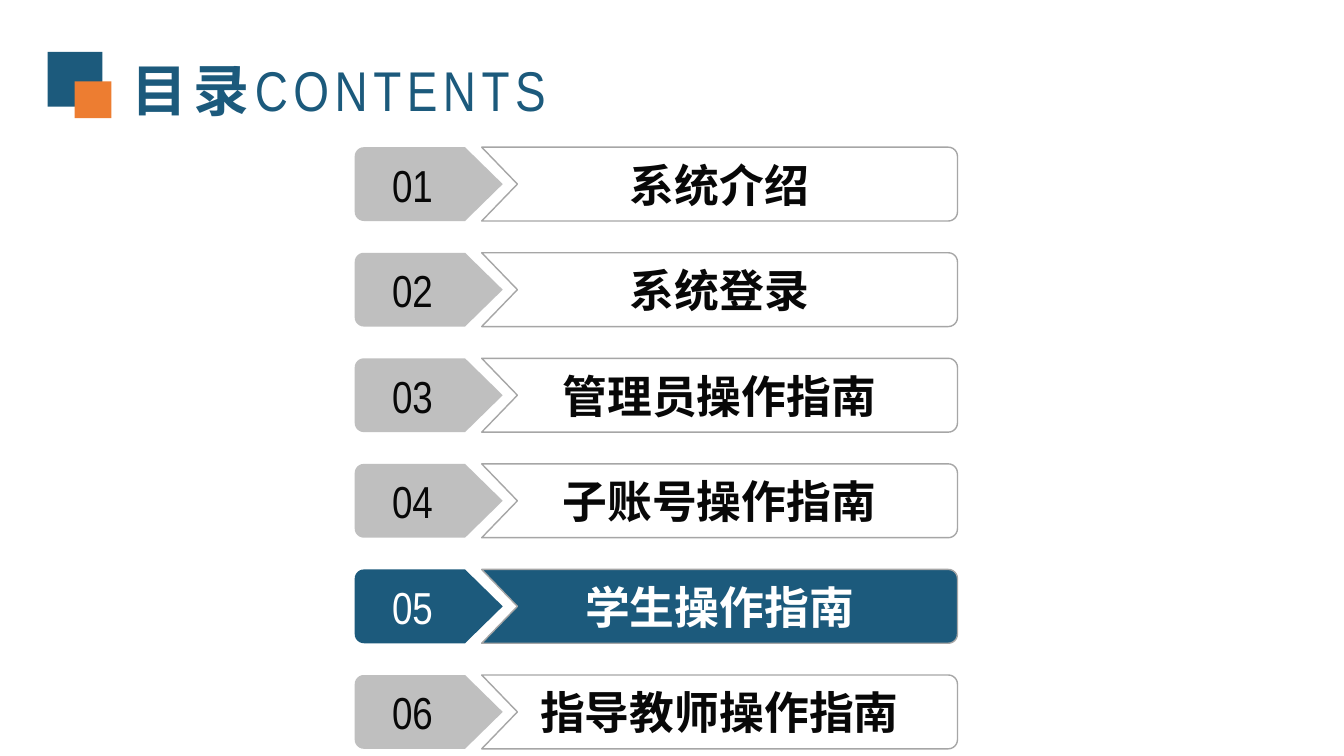
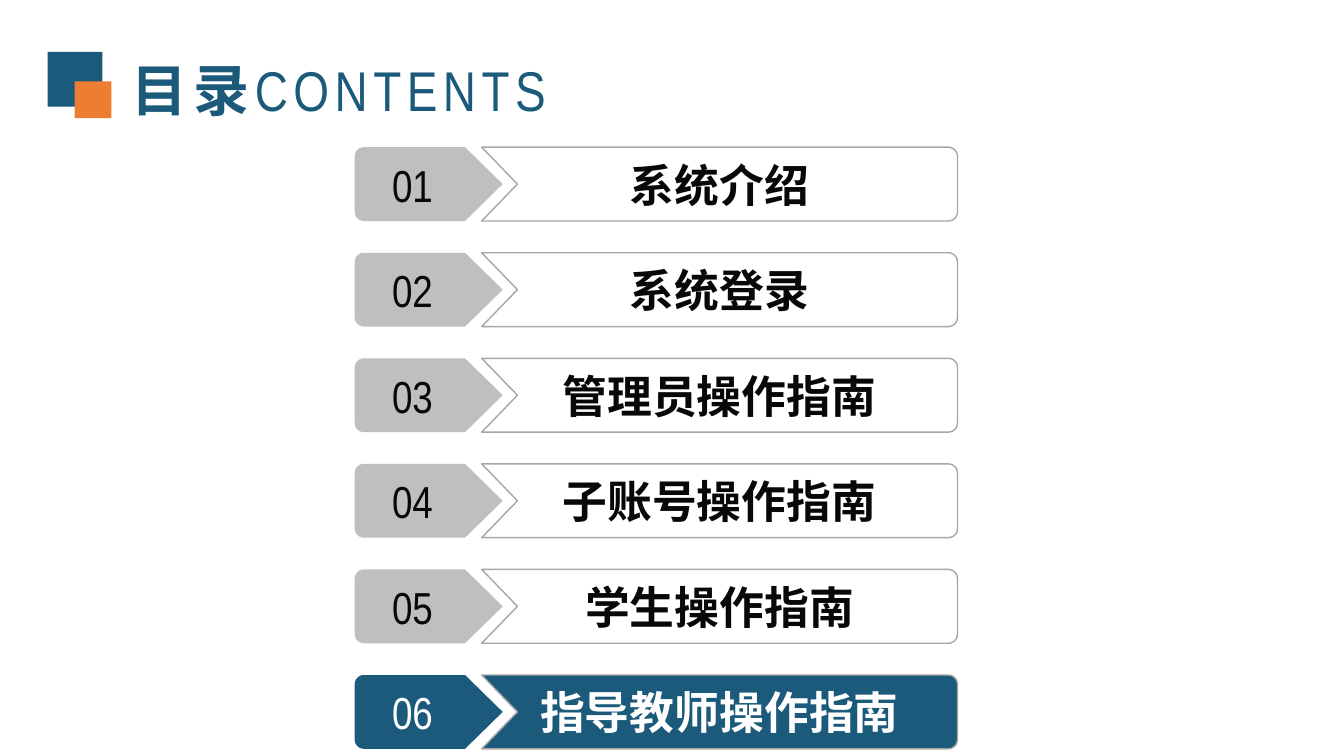
"""Build the two contents slides, each with its current chapter highlighted."""
from math import cos, radians, sin

from lxml.etree import SubElement
from pptx import Presentation
from pptx.dml.color import RGBColor
from pptx.enum.shapes import MSO_SHAPE
from pptx.enum.text import MSO_ANCHOR, MSO_AUTO_SIZE, PP_ALIGN
from pptx.oxml.ns import qn
from pptx.util import Cm, Pt

CHAPTERS = ["系统介绍", "系统登录", "管理员操作指南", "子账号操作指南", "学生操作指南", "指导教师操作指南"]
CURRENT = [5, 6]
TITLE = [("目录", True), ("CONTENTS", False)]

BLUE = RGBColor(0x1C, 0x5A, 0x7C)
ORANGE = RGBColor(0xED, 0x7D, 0x31)
GREY = RGBColor(0xBF, 0xBF, 0xBF)
OUTLINE = RGBColor(0xA6, 0xA6, 0xA6)
INK = RGBColor(0x08, 0x08, 0x08)
WHITE = RGBColor(0xFF, 0xFF, 0xFF)
CJK, NARROW = "Noto Sans CJK SC", "Arial Narrow"

SQUARES = [(1.2, 1.31, 1.38, BLUE), (1.88, 2.05, 0.93, ORANGE)]
ROW_TOP, ROW_PITCH, ROW_H, RADIUS = 3.71, 2.66, 1.86, 0.23
TAG_LEFT, TAG_SHOULDER, TAG_TIP = 8.94, 11.72, 12.67
LABEL_LEFT, LABEL_NOTCH, LABEL_RIGHT = 12.14, 13.04, 24.13


def add_run(p, text, size, color, bold):
    r = p.add_run()
    r.text = text
    r.font.size, r.font.bold = Pt(size), bold
    r.font.color.rgb = color
    r.font.name = CJK if bold else NARROW
    SubElement(r.font._element, qn("a:ea")).set("typeface", r.font.name)
    return r


def paint(sp, fill, line=None):
    sp.shadow.inherit = False
    if fill is None:
        sp.fill.background()
    else:
        sp.fill.solid()
        sp.fill.fore_color.rgb = fill
    if line is None:
        sp.line.fill.background()
    else:
        sp.line.color.rgb = line
        sp.line.width = Pt(1)


def corner(cx, cy, start):
    angles = [radians(start + 15 * i) for i in range(7)]
    return [(cx + RADIUS * cos(a), cy + RADIUS * sin(a)) for a in angles]


def add_outline(s, points, text, fill, line, color, bold, right_inset):
    points = [(Cm(x), Cm(y)) for x, y in points]
    builder = s.shapes.build_freeform(*points[0])
    builder.add_line_segments(points[1:], close=True)
    sp = builder.convert_to_shape()
    paint(sp, fill, line)
    tf = sp.text_frame
    tf.word_wrap = True
    tf.vertical_anchor = MSO_ANCHOR.MIDDLE
    tf.margin_left, tf.margin_right = Cm(0.38), Cm(right_inset)
    tf.margin_top = tf.margin_bottom = Cm(0.18)
    p = tf.paragraphs[0]
    p.alignment = PP_ALIGN.CENTER
    add_run(p, text, 32, color, bold)


def add_chapter(s, number, name, active):
    top = ROW_TOP + (number - 1) * ROW_PITCH
    bottom, middle = top + ROW_H, top + ROW_H / 2
    upper, lower = top + RADIUS, bottom - RADIUS
    color = WHITE if active else INK
    label = [(LABEL_LEFT, top), *corner(LABEL_RIGHT - RADIUS, upper, 270),
             *corner(LABEL_RIGHT - RADIUS, lower, 0),
             (LABEL_LEFT, bottom), (LABEL_NOTCH, middle)]
    tag = [(TAG_SHOULDER, top), (TAG_TIP, middle), (TAG_SHOULDER, bottom),
           *corner(TAG_LEFT + RADIUS, lower, 90),
           *corner(TAG_LEFT + RADIUS, upper, 180)]
    add_outline(s, label, name, BLUE if active else None, OUTLINE, color, True, 0.38)
    add_outline(s, tag, f"{number:02d}", BLUE if active else GREY, None, color, False, 1.2)


def add_title(s):
    for left, top, side, color in SQUARES:
        sp = s.shapes.add_shape(MSO_SHAPE.RECTANGLE, Cm(left), Cm(top), Cm(side), Cm(side))
        paint(sp, color)
    tf = s.shapes.add_textbox(Cm(3.07), Cm(1.27), Cm(13.13), Cm(2.06)).text_frame
    tf.word_wrap = True
    tf.auto_size = MSO_AUTO_SIZE.SHAPE_TO_FIT_TEXT
    for text, bold in TITLE:
        r = add_run(tf.paragraphs[0], text, 40, BLUE, bold)
        r.font._element.set("spc", "400")


def main():
    prs = Presentation()
    prs.slide_width, prs.slide_height = Cm(33.87), Cm(19.05)
    for current in CURRENT:
        s = prs.slides.add_slide(prs.slide_layouts[6])
        add_title(s)
        for number, name in enumerate(CHAPTERS, 1):
            add_chapter(s, number, name, number == current)
    prs.save("out.pptx")


if __name__ == "__main__":
    main()
